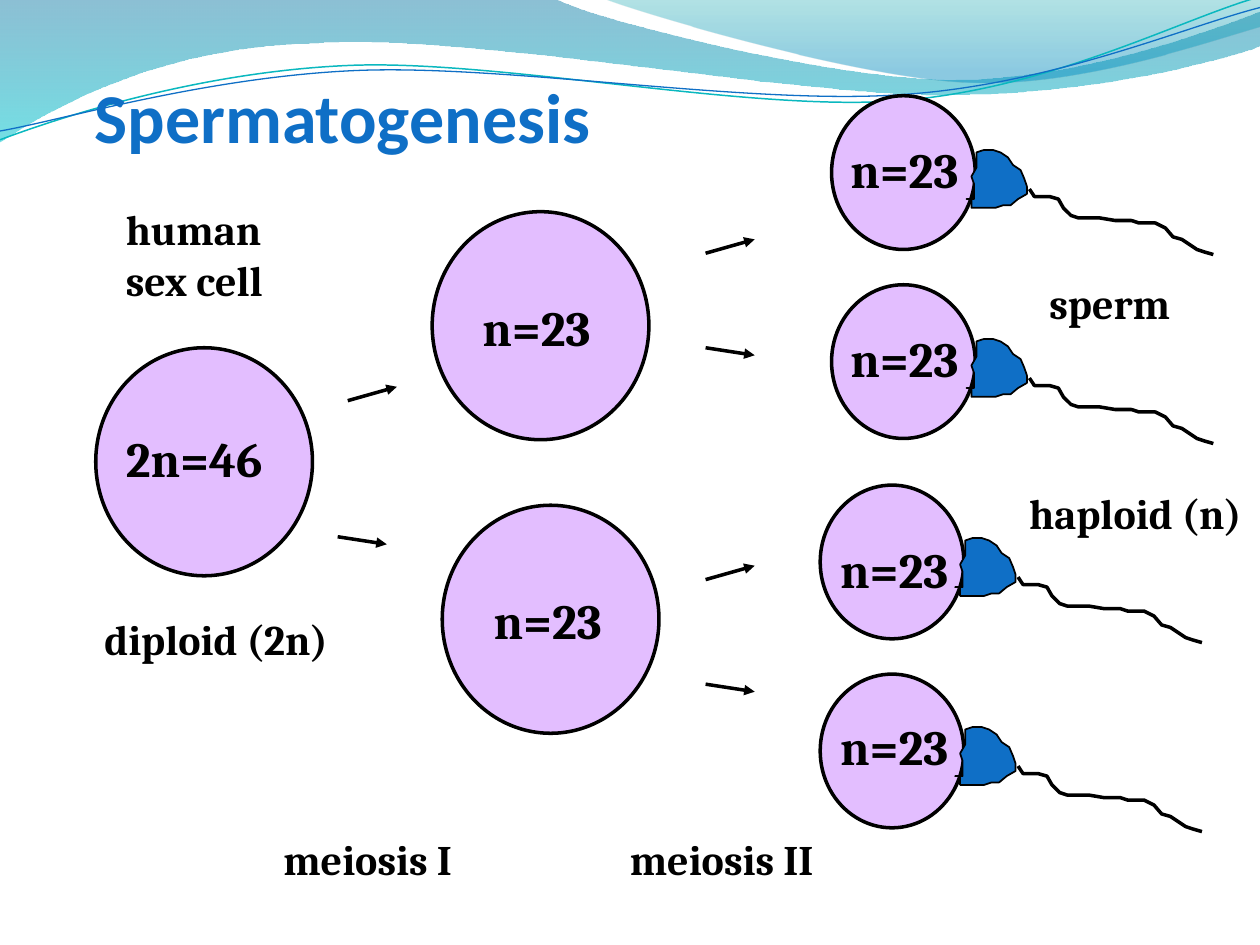
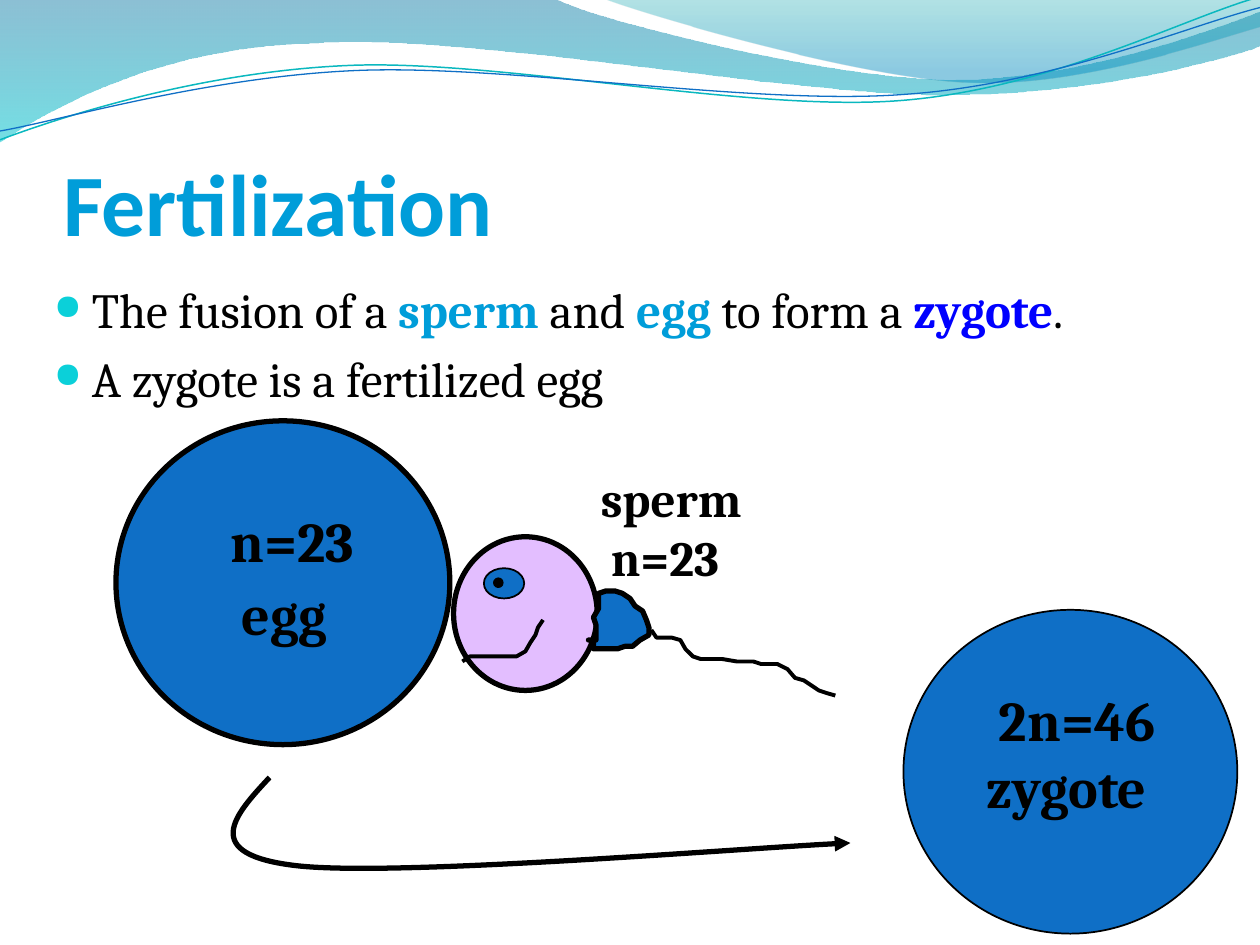
from dataclasses import dataclass

from lxml.etree import SubElement
from pptx import Presentation
from pptx.dml.color import RGBColor
from pptx.enum.shapes import MSO_CONNECTOR, MSO_SHAPE
from pptx.enum.text import MSO_ANCHOR, MSO_AUTO_SIZE, PP_ALIGN
from pptx.oxml.ns import qn
from pptx.util import Inches, Pt


@dataclass(frozen=True)
class Theme:
    heading_font: str = "Calibri"
    text_font: str = "Cambria"
    ink: str = "000000"
    blue: str = "0F6FC6"
    sky: str = "009DD9"
    link: str = "0000FF"
    lilac: str = "E3BEFF"
    teal: str = "0AB8BF"
    bullet: str = "0BD0D9"
    caption: int = 24
    body: int = 28
    large: int = 32


THEME = Theme()

BANDS = [
    ([(0, 0), (4.4, -0.01), (4.76, 0.17, 6.64, 0.63, 7.58, 0.63),
      (8.53, 0.63, 9.58, 0.26, 10, 0.09), (10.01, 0.36),
      (9.83, 0.44, 8.7, 0.76, 7.46, 0.75), (6.22, 0.75, 3.82, 0.28, 2.57, 0.34),
      (1.29, 0.36, 0.46, 0.83, -0.01, 1.13), (0, 0)],
     [(0, "0074A1", 45), (1, "00C6CF", 55)]),
    ([(4.79, -0.01), (5.09, 0.11, 6.82, 0.62, 7.69, 0.65),
      (8.56, 0.69, 9.61, 0.32, 10, 0.21), (10, 0), (4.79, -0.01)],
     [(0, "00A1A9", 30), (0.8, "008BBF", 45)]),
]
RIPPLES = [
    ([(0, 1.11), (0.48, 0.93, 1.58, 0.57, 2.77, 0.52),
      (3.95, 0.47, 5.93, 0.89, 7.13, 0.8), (8.33, 0.71, 9.38, 0.15, 9.98, -0.02)],
     THEME.teal, 0.85),
    ([(0, 1.04), (0.47, 0.96, 1.64, 0.61, 2.83, 0.56),
      (4.03, 0.51, 5.97, 0.84, 7.17, 0.75), (8.36, 0.67, 9.41, 0.21, 10, 0.06)],
     THEME.blue, 0.75),
]

HEAD_SIZE = (1.14, 1.22)
CELL_SIZE = (1.72, 1.81)
EGG_SIZE = (2.65, 2.57)
NECK = [
    (1.07, 0.82), (1.13, 0.82), (1.13, 0.76), (1.13, 0.7), (1.11, 0.64), (1.15, 0.57),
    (1.15, 0.51), (1.15, 0.45), (1.21, 0.43), (1.28, 0.43), (1.34, 0.45), (1.4, 0.49),
    (1.44, 0.55), (1.5, 0.59), (1.53, 0.66), (1.55, 0.72), (1.55, 0.78), (1.48, 0.82),
    (1.42, 0.87), (1.36, 0.87), (1.3, 0.89), (1.23, 0.89), (1.17, 0.89), (1.11, 0.89),
    (1.11, 0.82), (1.07, 0.82),
]
TAIL = [
    (1.57, 0.74), (1.61, 0.8), (1.67, 0.8), (1.73, 0.8), (1.8, 0.82), (1.84, 0.89),
    (1.9, 0.95), (1.96, 0.97), (2.13, 0.97), (2.25, 0.99), (2.38, 0.99), (2.44, 1.01),
    (2.57, 1.01), (2.65, 1.05), (2.71, 1.12), (2.78, 1.14), (2.84, 1.18), (2.9, 1.22),
    (2.96, 1.24), (3.03, 1.26),
]

CELLS = [
    ((0.76, 2.76), "2n=46", (0.9, 3.35, 1.31, 0.56)),
    ((3.51, 4.01), "n=23", (3.82, 4.64, 1.1, 0.56)),
    ((3.43, 1.68), "n=23", (3.73, 2.31, 1.1, 0.56)),
]
SPERM = [
    ((6.6, 0.76), (6.6, 0.76), (6.65, 1.06)),
    ((6.6, 2.26), (6.6, 2.26), (6.65, 2.56)),
    ((6.51, 3.85), (6.51, 3.84), (6.57, 4.23)),
    ((6.51, 5.35), (6.51, 5.34), (6.57, 5.64)),
]
RISE, FALL = (0.39, -0.11), (0.39, 0.06)
ARROWS = [
    ((2.76, 3.18), RISE), ((2.68, 4.26), FALL),
    ((5.6, 2.01), RISE), ((5.6, 2.76), FALL),
    ((5.6, 4.6), RISE), ((5.6, 5.43), FALL),
]
CAPTIONS = [
    ("human\nsex cell", (0.9, 1.57, 1.4, 0.9)),
    ("diploid (2n)", (0.73, 4.82, 1.99, 0.5)),
    ("meiosis I", (2.15, 6.57, 1.62, 0.5)),
    ("meiosis II", (4.9, 6.57, 1.72, 0.5)),
    ("sperm", (8.23, 2.15, 1.2, 0.5)),
    ("haploid (n)", (8.07, 3.82, 1.9, 0.5)),
]

FACTS = [
    [("The fusion of a ", None), ("sperm", THEME.sky), (" and ", None), ("egg", THEME.sky),
     (" to form a ", None), ("zygote", THEME.link), (".", None)],
    [("A zygote is a fertilized egg", None)],
]
MOUTH = [(3.67, 5.25), (3.73, 5.21), (3.79, 5.21), (3.85, 5.21), (3.92, 5.21), (3.98, 5.21),
         (4.04, 5.21), (4.1, 5.21), (4.17, 5.17), (4.21, 5.1), (4.25, 5.04), (4.27, 4.98),
         (4.31, 4.92)]
FUSION_ARROW = [(2.14, 6.17), (1.86, 6.47, 1.58, 6.78, 2.35, 6.87),
                (3.12, 6.96, 6.02, 6.72, 6.75, 6.69)]


def rgb(color):
    return RGBColor.from_string(color)


def box(left, top, width, height):
    return Inches(left), Inches(top), Inches(width), Inches(height)


def paint(shape, fill=None, line=None, width=1):
    shape.shadow.inherit = False
    if fill:
        shape.fill.solid()
        shape.fill.fore_color.rgb = rgb(fill)
    else:
        shape.fill.background()
    if line:
        shape.line.color.rgb = rgb(line)
        shape.line.width = Pt(width)
    else:
        shape.line.fill.background()


def bend_curves(shape, outline):
    segments = list(shape.element.iter(qn("a:lnTo")))
    for part in outline[1:]:
        count = len(part) // 2
        corners, segments = segments[:count], segments[count:]
        if count == 3:
            curve = corners[0].makeelement(qn("a:cubicBezTo"))
            corners[0].addprevious(curve)
            for corner in corners:
                curve.append(corner[0])
                corner.getparent().remove(corner)


def add_outline(slide, outline, offset=(0, 0), **look):
    points = [(Inches(part[i] + offset[0]), Inches(part[i + 1] + offset[1]))
              for part in outline for i in range(0, len(part), 2)]
    builder = slide.shapes.build_freeform(*points[0])
    builder.add_line_segments(points[1:], close=outline[0] == outline[-1])
    shape = builder.convert_to_shape()
    bend_curves(shape, outline)
    paint(shape, **look)
    return shape


def add_ellipse(slide, place, size, fill, width):
    ellipse = slide.shapes.add_shape(MSO_SHAPE.OVAL, *box(*place, *size))
    paint(ellipse, fill, THEME.ink, width)


def add_arrowhead(shape):
    SubElement(shape.line._get_or_add_ln(), qn("a:tailEnd"), type="triangle")


def style(run, size, color=THEME.ink, bold=True, font=THEME.text_font):
    run.font.name = font
    run.font.size = Pt(size)
    run.font.bold = bold
    run.font.color.rgb = rgb(color)


def add_label(slide, text, place, size, indents=()):
    frame = slide.shapes.add_textbox(*box(*place)).text_frame
    frame.text = text
    frame.word_wrap = False
    frame.auto_size = MSO_AUTO_SIZE.SHAPE_TO_FIT_TEXT
    for paragraph in frame.paragraphs:
        style(paragraph.runs[0], size)
    for paragraph, indent in zip(frame.paragraphs, indents):
        paragraph._p.get_or_add_pPr().set("marL", str(Inches(indent)))


def add_flagellum(slide, origin, neck_width, tail_width):
    add_outline(slide, NECK, origin, fill=THEME.blue, line=THEME.ink, width=neck_width)
    add_outline(slide, TAIL, origin, line=THEME.ink, width=tail_width)


def add_titled_slide(deck, text, place, size, color):
    slide = deck.slides.add_slide(deck.slide_layouts[5])
    title = slide.shapes.title
    title.left, title.top, title.width, title.height = box(*place)
    frame = title.text_frame
    frame.text = text
    frame.auto_size = MSO_AUTO_SIZE.NONE
    frame.vertical_anchor = MSO_ANCHOR.BOTTOM
    frame.margin_left = frame.margin_right = frame.margin_bottom = 0
    frame.margin_top = Inches(0.05)
    frame.paragraphs[0].alignment = PP_ALIGN.LEFT
    style(frame.paragraphs[0].runs[0], size, color, font=THEME.heading_font)
    return slide


def add_waves(slide, master):
    waves = []
    for outline, stops in BANDS:
        band = add_outline(slide, outline)
        band.fill.gradient()
        band.fill.gradient_angle = 270
        for stop, (position, color, opacity) in zip(band.fill.gradient_stops, stops):
            stop.position = position
            stop.color.rgb = rgb(color)
            for node in stop._gs.iter(qn("a:srgbClr")):
                SubElement(node, qn("a:alpha"), val=str(opacity * 1000))
        waves.append(band)
    for outline, color, width in RIPPLES:
        waves.append(add_outline(slide, outline, line=color, width=width))
    for position, wave in enumerate(waves, start=2):
        master.shapes.element.insert(position, wave.element)


def add_facts(slide):
    frame = slide.shapes.add_textbox(*box(0.33, 2.17, 9.25, 4.5)).text_frame
    frame.word_wrap = True
    for index, fact in enumerate(FACTS):
        paragraph = frame.add_paragraph() if index else frame.paragraphs[0]
        if index:
            paragraph.space_before = Pt(THEME.body * 0.2)
        props = paragraph._p.get_or_add_pPr()
        props.set("marL", str(Inches(0.3)))
        props.set("indent", str(-Inches(0.3)))
        SubElement(SubElement(props, qn("a:buClr")), qn("a:srgbClr"), val=THEME.bullet)
        SubElement(props, qn("a:buSzPct"), val="72000")
        SubElement(props, qn("a:buChar"), char="●")
        for words, accent in fact:
            run = paragraph.add_run()
            run.text = words
            style(run, THEME.body, accent or THEME.ink, bool(accent))


def fill_spermatogenesis(slide):
    for place, count, count_place in CELLS:
        add_ellipse(slide, place, CELL_SIZE, THEME.lilac, 2)
        add_label(slide, count, count_place, THEME.body)
    for (x, y), (dx, dy) in ARROWS:
        arrow = slide.shapes.add_connector(
            MSO_CONNECTOR.STRAIGHT, Inches(x), Inches(y), Inches(x + dx), Inches(y + dy))
        arrow.line.color.rgb = rgb(THEME.ink)
        arrow.line.width = Pt(2)
        add_arrowhead(arrow)
        SubElement(arrow.element.spPr, qn("a:effectLst"))
    for head, flagellum, count_place in SPERM:
        add_ellipse(slide, head, HEAD_SIZE, THEME.lilac, 2)
        add_label(slide, "n=23", (*count_place, 1.1, 0.56), THEME.body)
        add_flagellum(slide, flagellum, 1, 2)
    for text, place in CAPTIONS:
        add_label(slide, text, place, THEME.caption)


def fill_fertilization(slide):
    add_facts(slide)
    add_ellipse(slide, (0.92, 3.34), EGG_SIZE, THEME.blue, 3)
    add_label(slide, "n=23", (1.73, 3.97, 1.22, 0.63), THEME.large)
    add_label(slide, "egg", (1.82, 4.55, 0.99, 0.63), THEME.large)
    add_ellipse(slide, (3.6, 4.26), HEAD_SIZE, THEME.lilac, 3)
    add_label(slide, "sperm\nn=23", (4.67, 3.67, 1.37, 1.03), THEME.body, (0, 0.08))
    add_flagellum(slide, (3.6, 4.26), 3, 2.25)
    add_ellipse(slide, (3.84, 4.51), (0.32, 0.24), THEME.blue, 1)
    add_outline(slide, MOUTH, line=THEME.ink, width=2.25)
    add_ellipse(slide, (3.92, 4.59), (0.07, 0.07), THEME.ink, 1)
    add_ellipse(slide, (7.17, 4.84), EGG_SIZE, THEME.blue, 1)
    add_label(slide, "2n=46\nzygote", (7.73, 5.39, 1.6, 1.16), THEME.large, (0.1, 0))
    add_arrowhead(add_outline(slide, FUSION_ARROW, line=THEME.ink, width=3))


def main():
    deck = Presentation()
    deck.slide_width, deck.slide_height = Inches(10), Inches(7.5)
    spermatogenesis = add_titled_slide(
        deck, "Spermatogenesis", (0.75, 0.25, 5.42, 1), 40, THEME.blue)
    add_waves(spermatogenesis, deck.slide_master)
    fill_spermatogenesis(spermatogenesis)
    fertilization = add_titled_slide(
        deck, "Fertilization", (0.5, 0.77, 9, 1.25), 50, THEME.sky)
    fill_fertilization(fertilization)
    deck.save("out.pptx")


if __name__ == "__main__":
    main()
